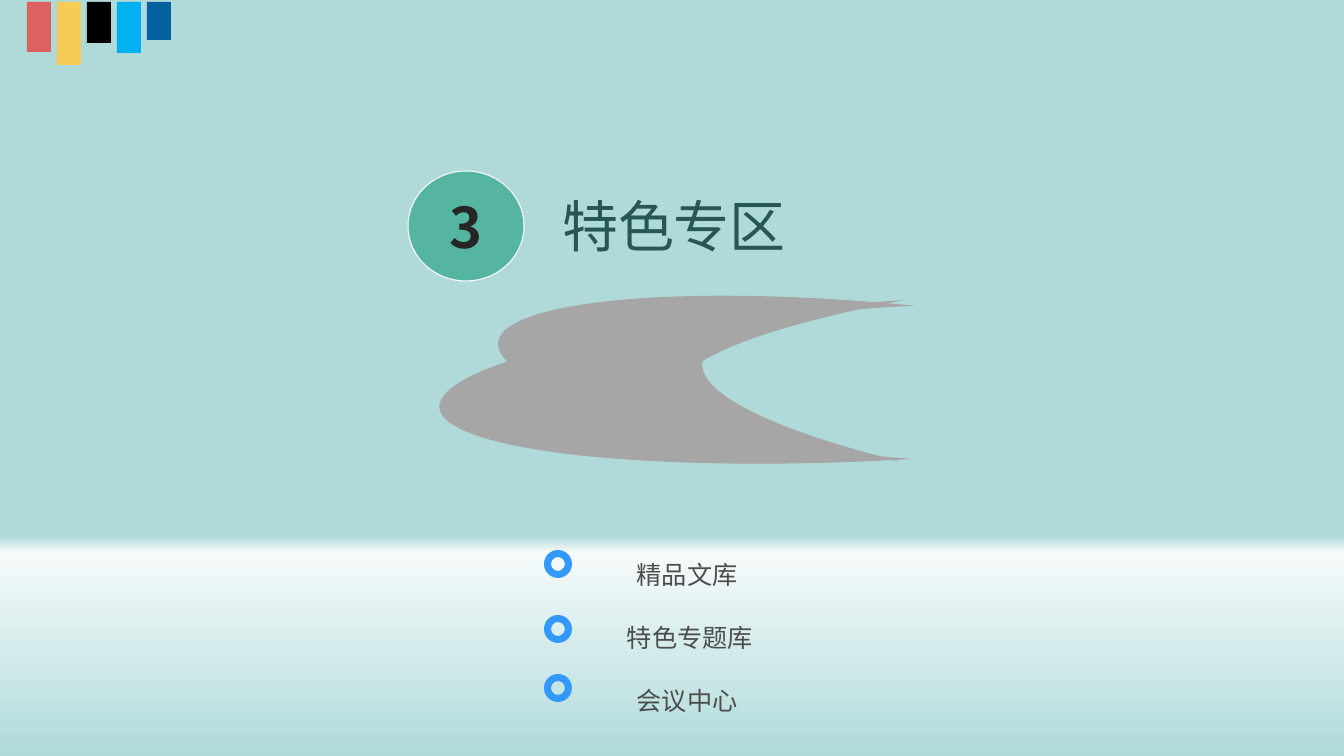
from lxml import etree
from pptx import Presentation
from pptx import util as u
from pptx.dml.color import RGBColor
from pptx.enum import shapes, text
from pptx.oxml.ns import qn

SHAPE = shapes.MSO_SHAPE
ALIGN = text.PP_ALIGN
ANCHOR = text.MSO_ANCHOR


def px(length):
    return u.Emu(round(length * 914400 / 100.8))


def color(value):
    return RGBColor.from_string(value)


class SectionSlide:
    heading_font = "Arial"
    body_font = "Noto Sans CJK SC"

    def __init__(self, presentation):
        self.slide = presentation.slides.add_slide(presentation.slide_layouts[5])

    def background(self, stops):
        self.slide.background.fill.gradient()
        gradient = self.slide.element.find(".//" + qn("a:gradFill"))
        stop_list = gradient.find(qn("a:gsLst"))
        for stop in list(stop_list):
            stop_list.remove(stop)
        for percent, value in stops:
            stop = etree.SubElement(stop_list, qn("a:gs"), pos=str(percent * 1000))
            etree.SubElement(stop, qn("a:srgbClr"), val=value)
        gradient.find(qn("a:lin")).set("ang", "5400000")

    def style(self, paragraph, size, value, font, align, bold=False):
        paragraph.alignment = align
        paragraph.font.size = u.Pt(size)
        paragraph.font.name = font
        paragraph.font.bold = bold
        paragraph.font.color.rgb = color(value)

    def title(self, words, left, top, width, height):
        shape = self.slide.shapes.title
        shape.left, shape.top, shape.width, shape.height = map(px, (left, top, width, height))
        frame = shape.text_frame
        frame.text = words
        frame.word_wrap = False
        frame.auto_size = text.MSO_AUTO_SIZE.NONE
        frame.vertical_anchor = ANCHOR.MIDDLE
        self.style(frame.paragraphs[0], 40, "285656", self.heading_font, ALIGN.LEFT)

    def shape(self, kind, left, top, width, height, fill, rotation=0):
        shape = self.slide.shapes.add_shape(kind, *map(px, (left, top, width, height)))
        shape.shadow.inherit = False
        shape.fill.solid()
        shape.fill.fore_color.rgb = color(fill)
        shape.line.fill.background()
        shape.rotation = rotation
        return shape

    def badge(self, words, left, top, width, height):
        shape = self.shape(SHAPE.FLOWCHART_CONNECTOR, left, top, width, height, "55B5A1")
        shape.line.color.rgb = color("FFFFFF")
        shape.line.width = u.Pt(0.75)
        frame = shape.text_frame
        frame.text = words
        frame.vertical_anchor = ANCHOR.MIDDLE
        self.style(frame.paragraphs[0], 40, "262626", self.body_font, ALIGN.CENTER, True)

    def topics(self, lines, left, top, width, height):
        box = self.slide.shapes.add_textbox(*map(px, (left, top, width, height)))
        frame = box.text_frame
        frame.word_wrap = True
        frame.text = "\n".join(lines)
        for index, paragraph in enumerate(frame.paragraphs):
            paragraph.line_spacing = u.Pt(34)
            paragraph.space_before = u.Pt(11 if index else 0)
            self.style(paragraph, 18, "4D4D4D", self.body_font, ALIGN.CENTER)


def main():
    presentation = Presentation()
    presentation.slide_width = px(1344)
    presentation.slide_height = px(756)

    section = SectionSlide(presentation)
    section.background([(0, "B0DADA"), (71, "B0DADA"), (73, "F6FBFB"), (100, "B0DADA")])
    section.badge("3", 408, 171, 116, 110)

    bars = [(50, "DD6161"), (63, "F8CA56"), (41, "000000"), (51, "00B0F0"), (38, "0361A1")]
    for index, (height, fill) in enumerate(bars):
        section.shape(SHAPE.RECTANGLE, 27 + 30 * index, 2, 24, height, fill)

    lower_moon = section.shape(SHAPE.MOON, 439, 314, 470, 159, "A6A6A6", 356.6)
    lower_moon.adjustments[0] = 0.504
    section.shape(SHAPE.MOON, 497, 285, 411, 156, "A6A6A6", 5.7)

    section.title("特色专区", 552, 186, 253, 78)
    section.topics(["精品文库", " 特色专题库", "会议中心"], 351, 537, 672, 177)
    for top in (550, 615, 674):
        section.shape(SHAPE.DONUT, 544, top, 28, 28, "3399FF")

    presentation.save("out.pptx")


if __name__ == "__main__":
    main()
